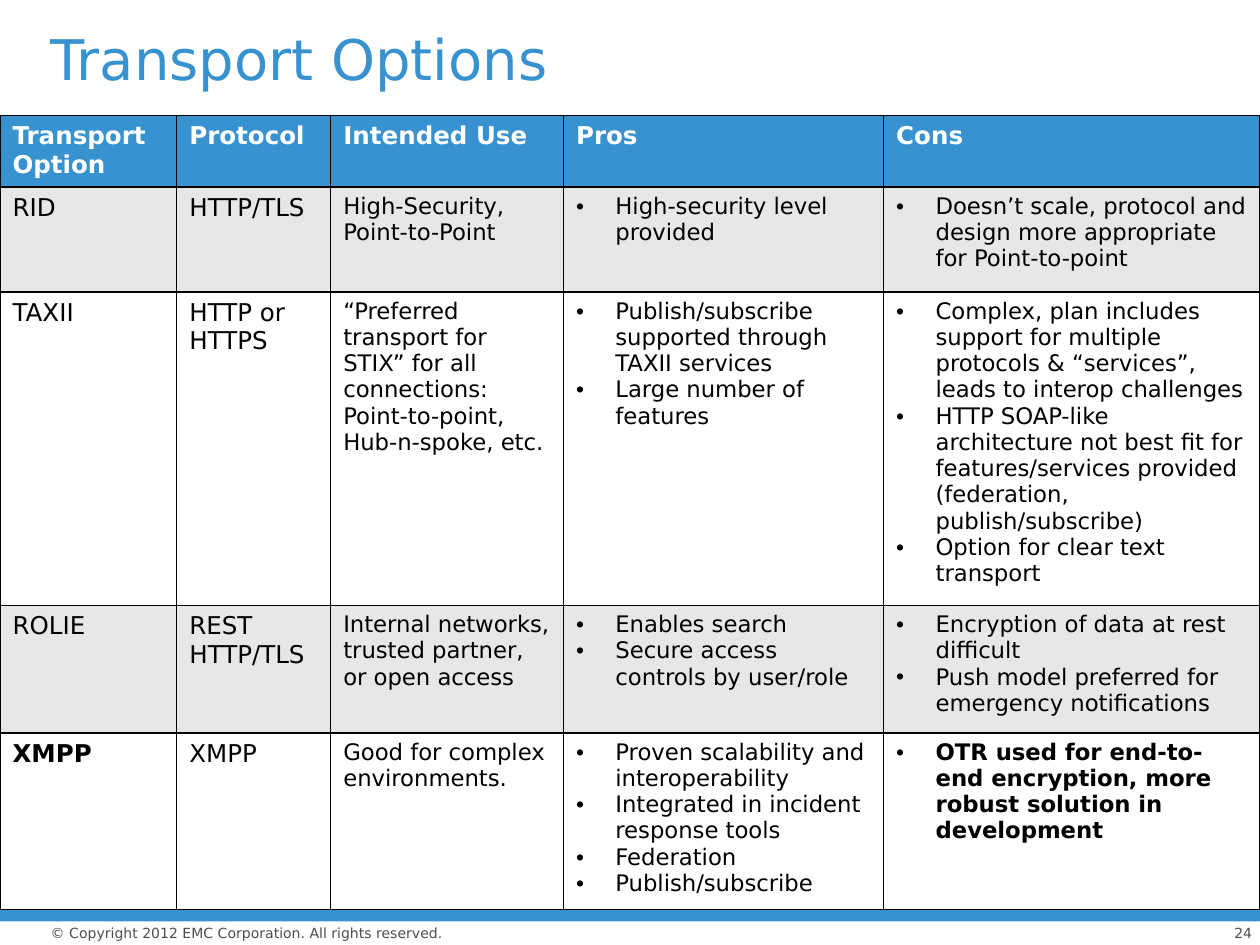
import pptx
import pptx.dml.color
import pptx.enum.shapes
import pptx.enum.text
import pptx.oxml
import pptx.oxml.ns
import pptx.util
from lxml import etree

Pt = pptx.util.Pt
ALIGN = pptx.enum.text.PP_ALIGN
ANCHOR = pptx.enum.text.MSO_ANCHOR
qn = pptx.oxml.ns.qn

FONT = "DejaVu Sans"
COLORS = {"blue": "3892D0", "gray": "4D4D4D", "band": "E7E7E7",
          "white": "FFFFFF", "black": "000000"}

TITLE = "Transport Options"
COPYRIGHT = "© Copyright 2012 EMC Corporation. All rights reserved."
PAGE_NUMBER = "24"

HEADERS = ["Transport Option", "Protocol", "Intended Use", "Pros", "Cons"]
OPTIONS = [
    ("RID", "HTTP/TLS", "High-Security, Point-to-Point",
     ["High-security level provided"],
     ["Doesn’t scale, protocol and design more appropriate for Point-to-point"]),
    ("TAXII", "HTTP or HTTPS",
     "“Preferred transport for STIX” for all connections: Point-to-point, Hub-n-spoke, etc.",
     ["Publish/subscribe supported through TAXII services", "Large number of features"],
     ["Complex, plan includes support for multiple protocols & “services”, "
      "leads to interop challenges",
      "HTTP SOAP-like architecture not best fit for features/services provided "
      "(federation, publish/subscribe)",
      "Option for clear text transport"]),
    ("ROLIE", "REST HTTP/TLS", "Internal networks, trusted partner, or open access",
     ["Enables search", "Secure access controls by user/role"],
     ["Encryption of data at rest difficult",
      "Push model preferred for emergency notifications"]),
    ("XMPP", "XMPP", "Good for complex environments.",
     ["Proven scalability and interoperability", "Integrated in incident response tools",
      "Federation", "Publish/subscribe"],
     ["OTR used for end-to-end encryption, more robust solution in development"]),
]
BOLD_CELLS = {(4, 0), (4, 4)}
COLUMN_WIDTHS = [101, 88, 133, 183, 215]
ROW_HEIGHTS = [40, 60, 172, 73, 97.5]
TABLE_TOP = 66
BULLET_INDENT = 22.5


def color(name):
    return pptx.dml.color.RGBColor.from_string(COLORS[name])


def write(frame, text, size, fill, bold=False, align=ALIGN.LEFT, spacing=None):
    lines = text if isinstance(text, list) else [text]
    for index, line in enumerate(lines):
        para = frame.paragraphs[0] if index == 0 else frame.add_paragraph()
        para.alignment = align
        if spacing:
            para.line_spacing = Pt(spacing)
        if isinstance(text, list):
            props = para._p.get_or_add_pPr()
            props.set("marL", str(Pt(BULLET_INDENT)))
            props.set("indent", str(-Pt(BULLET_INDENT)))
            etree.SubElement(props, qn("a:buFont")).set("typeface", "Arial")
            etree.SubElement(props, qn("a:buChar")).set("char", "•")
        span = para.add_run()
        span.text = line
        span.font.name = FONT
        span.font.size = Pt(size)
        span.font.bold = bold
        span.font.color.rgb = color(fill)


def clear_margins(frame):
    frame.margin_left = frame.margin_right = frame.margin_top = frame.margin_bottom = 0


def add_footer_text(page, text, left, width, align, wrap):
    box = page.shapes.add_textbox(Pt(left), Pt(528.5), Pt(width), Pt(9.5))
    clear_margins(box.text_frame)
    box.text_frame.word_wrap = wrap
    write(box.text_frame, text, 8, "gray", align=align)


def add_borders(cell):
    props = cell._tc.get_or_add_tcPr()
    for side in ("lnL", "lnR", "lnT", "lnB"):
        line = etree.SubElement(props, qn("a:" + side), w=str(Pt(1)))
        fill = etree.SubElement(line, qn("a:solidFill"))
        etree.SubElement(fill, qn("a:srgbClr"), val=COLORS["black"])


def add_options_table(page):
    rows = [HEADERS] + OPTIONS
    table = page.shapes.add_table(len(rows), len(HEADERS), 0, Pt(TABLE_TOP),
                                  Pt(sum(COLUMN_WIDTHS)), Pt(sum(ROW_HEIGHTS))).table
    for column, width in zip(table.columns, COLUMN_WIDTHS):
        column.width = Pt(width)
    for row, height in zip(table.rows, ROW_HEIGHTS):
        row.height = Pt(height)
    for r, row in enumerate(rows):
        header = r == 0
        background = "blue" if header else "band" if r % 2 else "white"
        for c, text in enumerate(row):
            cell = table.cell(r, c)
            add_borders(cell)
            cell.fill.solid()
            cell.fill.fore_color.rgb = color(background)
            write(cell.text_frame, text, 14 if header or c < 2 else 13,
                  "white" if header else "black", bold=header or (r, c) in BOLD_CELLS)


def main():
    deck = pptx.Presentation()
    deck.slide_width, deck.slide_height = Pt(720), Pt(540)
    page = deck.slides.add_slide(deck.slide_layouts[5])

    title = page.shapes.title
    title.left, title.top, title.width, title.height = Pt(29), Pt(16), Pt(662), Pt(72.5)
    frame = title.text_frame
    clear_margins(frame)
    frame.margin_bottom = Pt(36)
    frame.vertical_anchor = ANCHOR.BOTTOM
    frame.auto_size = pptx.enum.text.MSO_AUTO_SIZE.NONE
    write(frame, TITLE, 32, "blue", spacing=36)

    bar = page.shapes.add_shape(pptx.enum.shapes.MSO_SHAPE.RECTANGLE,
                                0, Pt(486), Pt(720), Pt(40.5))
    bar.shadow.inherit = False
    bar.fill.solid()
    bar.fill.fore_color.rgb = color("blue")
    bar.line.fill.background()

    add_footer_text(page, COPYRIGHT, 29, 228, ALIGN.LEFT, False)
    add_footer_text(page, PAGE_NUMBER, 673.5, 42, ALIGN.RIGHT, True)
    add_options_table(page)
    deck.save("out.pptx")


if __name__ == "__main__":
    main()
